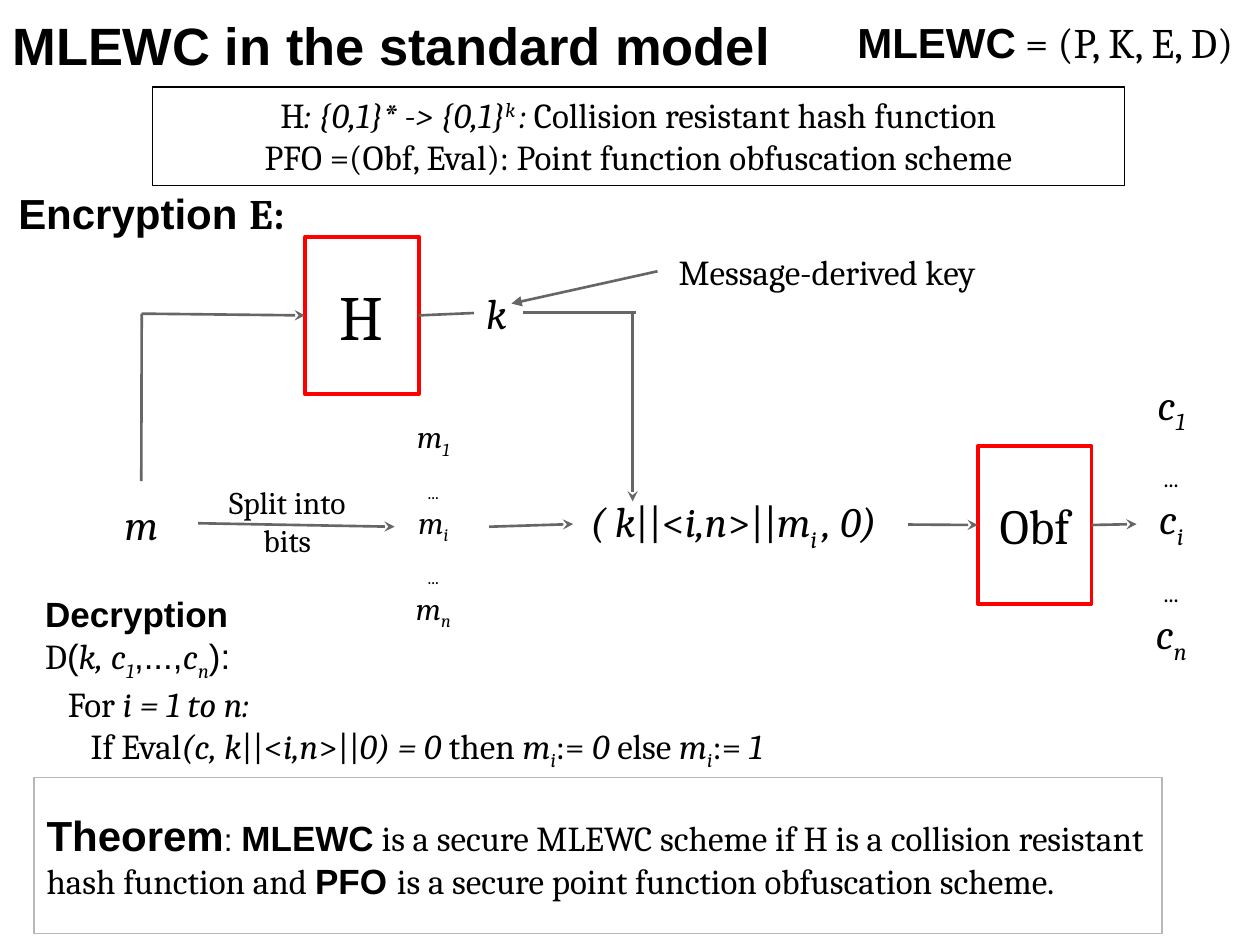
from lxml.etree import SubElement
from pptx import Presentation
from pptx.dml.color import RGBColor
from pptx.enum.shapes import MSO_CONNECTOR, MSO_SHAPE
from pptx.enum.text import MSO_ANCHOR, PP_ALIGN
from pptx.oxml.ns import qn
from pptx.util import Pt

TOP, LEFT, RIGHT = 0, 1, 3
BASE = {"-": "-25000", "+": "30000"}


def color(text):
    """Turn a hex string into a colour."""
    return RGBColor.from_string(text)


def assign(item, values):
    """Set every attribute in a dict of format values."""
    for name, value in values.items():
        setattr(item, name, value)


def add_run(para, size, text, style="", own=None):
    """Add a run; style holds a (Arial), b, i, - (subscript) or + (superscript)."""
    run = para.add_run()
    run.text = text
    assign(run.font, {
        "name": "Arial" if "a" in style else "Cambria",
        "size": Pt(own or size),
        "bold": "b" in style,
        "italic": "i" in style,
    })
    run.font.color.rgb = color("000000")
    for mark in BASE:
        if mark in style:
            run.font._element.set("baseline", BASE[mark])


def fill_text(shape, paras, size, center=True, middle=True, pad=7.2, left=7.2, step=0):
    """Write paragraphs of runs, each indented a step more after the second."""
    frame = shape.text_frame
    assign(frame, {
        "word_wrap": True,
        "vertical_anchor": MSO_ANCHOR.MIDDLE if middle else MSO_ANCHOR.TOP,
        "margin_left": Pt(left), "margin_right": Pt(7.2),
        "margin_top": Pt(pad), "margin_bottom": Pt(pad),
    })
    for row, runs in enumerate(paras):
        para = frame.add_paragraph() if row else frame.paragraphs[0]
        para.alignment = PP_ALIGN.CENTER if center else PP_ALIGN.LEFT
        if step and row > 1:
            para._p.get_or_add_pPr().set("marL", str(Pt(step * (row - 1))))
        for run in runs:
            add_run(para, size, *run)


def add_label(slide, spot, paras, size, **form):
    """Add a plain text box."""
    shape = slide.shapes.add_textbox(*map(Pt, spot))
    fill_text(shape, paras, size, **form)
    return shape


def add_box(slide, spot, paras, size, line=None, width=0.75, fill=None, **form):
    """Add a rectangle with optional outline and fill."""
    shape = slide.shapes.add_shape(MSO_SHAPE.RECTANGLE, *map(Pt, spot))
    shape.shadow.inherit = False
    if fill:
        shape.fill.solid()
        shape.fill.fore_color.rgb = color(fill)
    else:
        shape.fill.background()
    if line:
        shape.line.color.rgb = color(line)
        shape.line.width = Pt(width)
    else:
        shape.line.fill.background()
    fill_text(shape, paras, size, **form)
    return shape


def add_line(slide, start, end, tip=None):
    """Link two ends, each a point or a (shape, side) pair."""
    ends = [(0, 0) if hasattr(e[0], "shape_id") else e for e in (start, end)]
    link = slide.shapes.add_connector(
        MSO_CONNECTOR.STRAIGHT, *(Pt(v) for point in ends for v in point))
    for join, spot in ((link.begin_connect, start), (link.end_connect, end)):
        if hasattr(spot[0], "shape_id"):
            join(*spot)
    link.line.color.rgb = color("666666")
    link.line.width = Pt(1.5)
    if tip:
        SubElement(link.line._get_or_add_ln(), qn("a:tailEnd"), type=tip)
    SubElement(link._element.spPr, qn("a:effectLst"))


def add_stack(slide, spot, name, size):
    """Add a column of indexed symbols parted by dots."""
    paras = []
    for index in "1in":
        paras += [[(name, "i"), (index, "i-")], [("...", "-")]]
    add_label(slide, spot, paras[:-1], size)


def add_heads(slide):
    """Add the title, the scheme name and the definitions."""
    add_label(slide, (0, 0, 648, 90), [[("MLEWC in the standard model", "ab")]], 30,
              center=False, middle=False)
    add_label(slide, (474.5, -21, 245.5, 89.25),
              [[("MLEWC", "ab"), (" = (P, K, E, D)",)]], 24)
    add_box(slide, (87, 49.75, 555.75, 56.25), [
        [("H",), (": {0,1}* -> {0,1}", "i"), ("k ", "i+"), (": ", "i"),
         ("Collision resistant hash function",)],
        [("PFO =(Obf, Eval): Point function obfuscation scheme",)],
    ], 20, line="000000", middle=False, pad=3.6)
    add_label(slide, (-5, 100, 183, 48), [[("Encryption ", "ab"), ("E:", "b")]], 24,
              middle=False)


def add_flow(slide):
    """Add the encryption diagram."""
    hash_box = add_box(slide, (174.25, 135.25, 65, 90), [[("H",)]], 36,
                       line="FF0000", width=2.25)
    obf = add_box(slide, (558.75, 255, 65, 90), [[("Obf",)]], 28,
                  line="FF0000", width=2.25)
    note = add_label(slide, (375.75, 131, 265, 48), [[("Message-derived key",)]], 20,
                     center=False, left=12)
    text = add_label(slide, (48.25, 275, 65, 48), [[("m", "i")]], 24)
    add_label(slide, (119.5, 266.5, 89.25, 62.5), [[("Split into bits",)]], 18)
    add_stack(slide, (203, 219, 89.25, 161), "m", 18)
    add_stack(slide, (645, 217.5, 48.5, 161), "c", 24)
    point = add_label(slide, (319, 268.5, 200, 62.5), [[
        ("( k", "i"), ("||<",), ("i,n", "i"), (">||",), ("m", "i"), ("i ", "i-"),
        (", 0)", "i")]], 24)
    key = add_box(slide, (270.75, 167, 24.5, 23.75), [[("k", "i")]], 24,
                  fill="FFFFFF", center=False)
    for start, end, tip in (
        ((text, TOP), (81, 179.25), None),
        ((81, 179.25), (hash_box, LEFT), "stealth"),
        ((hash_box, RIGHT), (key, LEFT), None),
        ((note, LEFT), (292.25, 173.5), "triangle"),
        ((299, 178.5), (363.5, 178.5), None),
        ((361.5, 178.5), (361.5, 286.5), "stealth"),
        ((text, RIGHT), (225.5, 301), "stealth"),
        ((279.5, 301), (327.5, 299.5), "stealth"),
        ((point, RIGHT), (obf, LEFT), "stealth"),
        ((obf, RIGHT), (649.5, 299.5), "stealth"),
    ):
        add_line(slide, start, end, tip)


def add_foot(slide):
    """Add the decryption steps and the theorem."""
    add_label(slide, (18.75, 331.25, 527.75, 128), [
        [("Decryption", "ab")],
        [("D",), ("(", "a"), ("k, c", "i"), ("1", "i-"), (",...,", "a"), ("c", "i"),
         ("n", "i-"), ("):", "a")],
        [("For",), (" i = 1 to n:", "i")],
        [("If Eval",), ("(c, k", "i"), ("||<",), ("i,n", "i"), (">||",),
         ("0) = 0 ", "i"), ("then",), (" m", "i"), ("i", "i-"), (":= ",),
         ("0 ", "i"), ("else",), (" m", "i"), ("i", "i-"), (":= ",), ("1", "i")],
    ], 20, center=False, middle=False, step=13)
    add_box(slide, (19.5, 444.25, 644.5, 89.25), [[
        ("Theorem", "ab", 24), (": ", "a", 18), ("MLEWC", "ab"),
        (" is a secure MLEWC scheme if H is a collision resistant hash function and ",),
        ("PFO ", "ab"), ("is a secure point function obfuscation scheme.",),
    ]], 20, line="B7B7B7", center=False)


def main():
    """Build and save the slide."""
    deck = Presentation()
    assign(deck, {"slide_width": Pt(720), "slide_height": Pt(540)})
    slide = deck.slides.add_slide(deck.slide_layouts[6])
    add_heads(slide)
    add_flow(slide)
    add_foot(slide)
    deck.save("out.pptx")


if __name__ == "__main__":
    main()
